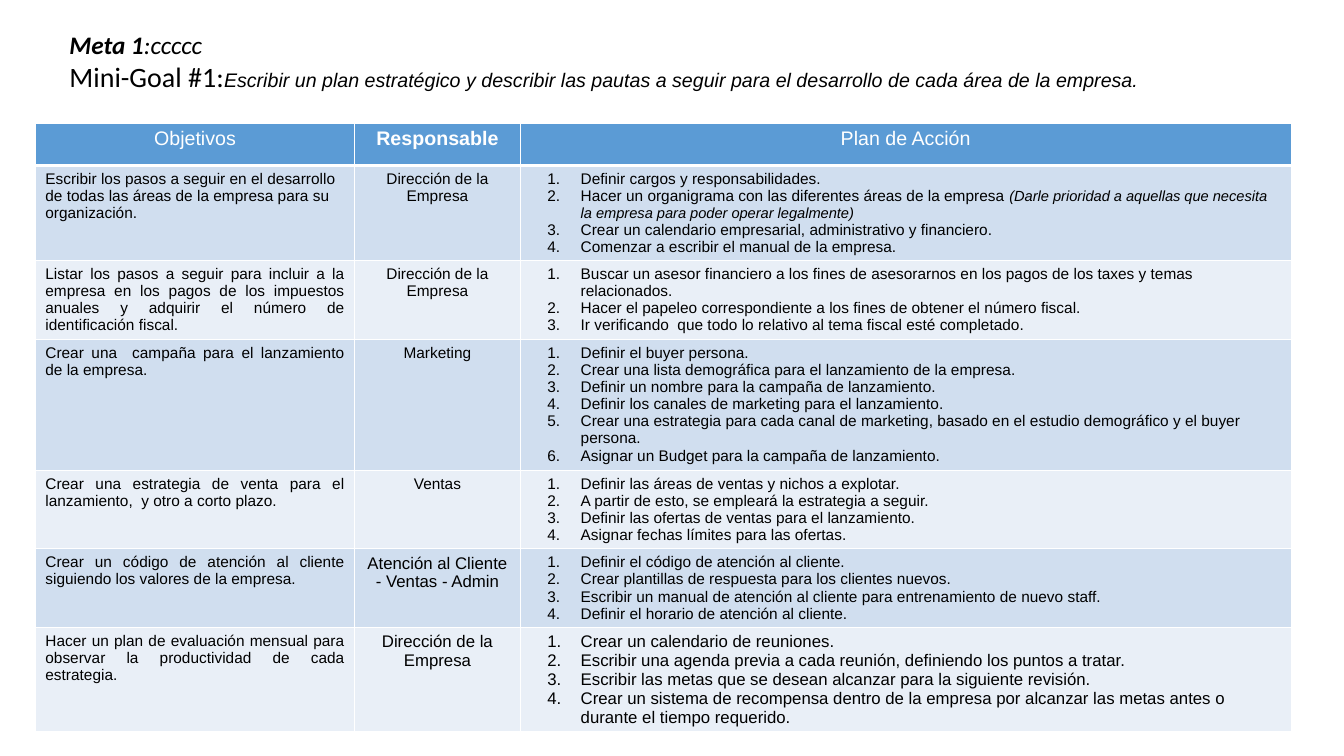
from pptx import Presentation
from pptx.dml.color import RGBColor
from pptx.enum.text import PP_ALIGN as Align
from pptx.oxml.ns import qn
from pptx.util import Cm, Pt
from lxml.etree import SubElement as Sub

BLACK = RGBColor(0x00, 0x00, 0x00)
WHITE = RGBColor(0xFF, 0xFF, 0xFF)
BLUE = RGBColor(0x5B, 0x9B, 0xD5)
BANDS = (RGBColor(0xD0, 0xDE, 0xEF), RGBColor(0xE9, 0xEF, 0xF7))

COLS = (8.05, 4.17, 19.43)
HEADS = (("Objetivos", False), ("Responsable", True), ("Plan de Acción", False))
HEAD_TALL = 1.07

# Row height, goal, owner, owner size, steps, step size
GOALS = (
    (2.39, "Escribir los pasos a seguir en el desarrollo de todas las áreas de la empresa para su organización.",
     "Dirección de la Empresa", 11,
     ("Definir cargos y responsabilidades.",
      ("Hacer un organigrama con las diferentes áreas de la empresa ",
       "(Darle prioridad a aquellas que necesita la empresa para poder operar legalmente)"),
      "Crear un calendario empresarial, administrativo y financiero.",
      "Comenzar a escribir el manual de la empresa."), 11),
    (1.97, "Listar los pasos a seguir para incluir a la empresa en los pagos de los impuestos anuales y adquirir "
     "el número de identificación fiscal.",
     "Dirección de la Empresa", 11,
     ("Buscar un asesor financiero a los fines de asesorarnos en los pagos de los taxes y temas relacionados.",
      "Hacer el papeleo correspondiente a los fines de obtener el número fiscal.",
      "Ir verificando  que todo lo relativo al tema fiscal esté completado."), 11),
    (3.3, "Crear una  campaña para el lanzamiento de la empresa.",
     "Marketing", 11,
     ("Definir el buyer persona.",
      "Crear una lista demográfica para el lanzamiento de la empresa.",
      "Definir un nombre para la campaña de lanzamiento.",
      "Definir los canales de marketing para el lanzamiento.",
      "Crear una estrategia para cada canal de marketing, basado en el estudio demográfico y el buyer persona.",
      "Asignar un Budget para la campaña de lanzamiento."), 11),
    (1.98, "Crear una estrategia de venta para el lanzamiento,  y otro a corto plazo.",
     "Ventas", 11,
     ("Definir las áreas de ventas y nichos a explotar.",
      "A partir de esto, se empleará la estrategia a seguir.",
      "Definir las ofertas de ventas para el lanzamiento.",
      "Asignar fechas límites para las ofertas."), 11),
    (1.98, "Crear un código de atención al cliente siguiendo los valores de la empresa.",
     "Atención al Cliente - Ventas - Admin", 12,
     ("Definir el código de atención al cliente.",
      "Crear plantillas de respuesta para los clientes nuevos.",
      "Escribir un manual de atención al cliente para entrenamiento de nuevo staff.",
      "Definir el horario de atención al cliente."), 11),
    (2.62, "Hacer un plan de evaluación mensual para observar la productividad de cada estrategia.",
     "Dirección de la Empresa", 12,
     ("Crear un calendario de reuniones.",
      "Escribir una agenda previa a cada reunión, definiendo los puntos a tratar.",
      "Escribir las metas que se desean alcanzar para la siguiente revisión.",
      "Crear un sistema de recompensa dentro de la empresa por alcanzar las metas antes o durante el "
      "tiempo requerido."), 12),
)

TITLE = (
    (("Meta 1", "Calibri", 18, True, True), (":ccccc", "Calibri", 18, False, True)),
    (("Mini-Goal #1:", "Calibri", 20, False, False),
     ("Escribir un plan estratégico y describir las pautas a seguir para el desarrollo de cada área de la empresa.",
      "Arial", 14, False, True)),
)


class Page:
    face = "Arial"

    def __init__(self, deck):
        self.slide = deck.slides.add_slide(deck.slide_layouts[6])

    def style(self, font, size, color=BLACK, bold=False, italic=False, face=None):
        font.name, font.size = face or self.face, Pt(size)
        font.bold, font.italic = bold, italic
        font.color.rgb = color

    def title(self, lines, left, top, width, height):
        frame = self.slide.shapes.add_textbox(Cm(left), Cm(top), Cm(width), Cm(height)).text_frame
        frame.word_wrap = True
        for n, line in enumerate(lines):
            para = frame.add_paragraph() if n else frame.paragraphs[0]
            for text, face, size, bold, italic in line:
                run = para.add_run()
                run.text = text
                self.style(run.font, size, bold=bold, italic=italic, face=face)

    def table(self, left, top, cols, rows):
        grid = self.slide.shapes.add_table(len(rows), len(cols), Cm(left), Cm(top),
                                           Cm(sum(cols)), Cm(sum(rows))).table
        grid.first_row = grid.horz_banding = False
        for col, width in zip(grid.columns, cols):
            col.width = Cm(width)
        for row, height in zip(grid.rows, rows):
            row.height = Cm(height)
        return grid

    def box(self, cell, fill, top=1, low=1):
        """Give a cell its white borders, in points, and then its fill."""
        props = cell._tc.get_or_add_tcPr()
        for side, width in (("L", 1), ("R", 1), ("T", top), ("B", low)):
            line = Sub(props, qn("a:ln" + side), w=str(Pt(width)))
            Sub(Sub(line, qn("a:solidFill")), qn("a:srgbClr"), val=str(WHITE))
        cell.fill.solid()
        cell.fill.fore_color.rgb = fill

    def text(self, cell, text, size, align, color=BLACK, bold=False):
        para = cell.text_frame.paragraphs[0]
        para.text, para.alignment = text, align
        self.style(para.font, size, color, bold)

    def steps(self, cell, steps, size):
        """Write a numbered list; a pair is a step with an italic remark."""
        frame = cell.text_frame
        for n, step in enumerate(steps):
            para = frame.add_paragraph() if n else frame.paragraphs[0]
            props = para._p.get_or_add_pPr()
            props.set("marL", str(Cm(1.27)))
            props.set("indent", str(Cm(-0.84)))
            Sub(Sub(props, qn("a:buClr")), qn("a:srgbClr"), val=str(BLACK))
            Sub(props, qn("a:buFont"), typeface=self.face)
            Sub(props, qn("a:buAutoNum"), type="arabicPeriod")
            if isinstance(step, str):
                para.text = step
                self.style(para.font, size)
            else:
                for part, (pt, slant) in zip(step, ((size, False), (10.5, True))):
                    run = para.add_run()
                    run.text = part
                    self.style(run.font, pt, italic=slant)


def main():
    deck = Presentation()
    deck.slide_width, deck.slide_height = Cm(33.87), Cm(19.05)
    page = Page(deck)

    grid = page.table(0.89, 3.1, COLS, [HEAD_TALL] + [goal[0] for goal in GOALS])
    for col, (head, bold) in enumerate(HEADS):
        cell = grid.cell(0, col)
        page.box(cell, BLUE, low=3)
        page.text(cell, head, 14, Align.CENTER, WHITE, bold)
    for n, (_, goal, owner, size, steps, pt) in enumerate(GOALS):
        cells = [grid.cell(n + 1, col) for col in range(len(COLS))]
        for cell in cells:
            page.box(cell, BANDS[n % 2], top=1 if n else 3)
        page.text(cells[0], goal, 11, Align.JUSTIFY if n else Align.LEFT)
        page.text(cells[1], owner, size, Align.CENTER)
        page.steps(cells[2], steps, pt)

    page.title(TITLE, 1.5, 0.61, 28.47, 1.88)
    deck.save("out.pptx")


if __name__ == "__main__":
    main()
